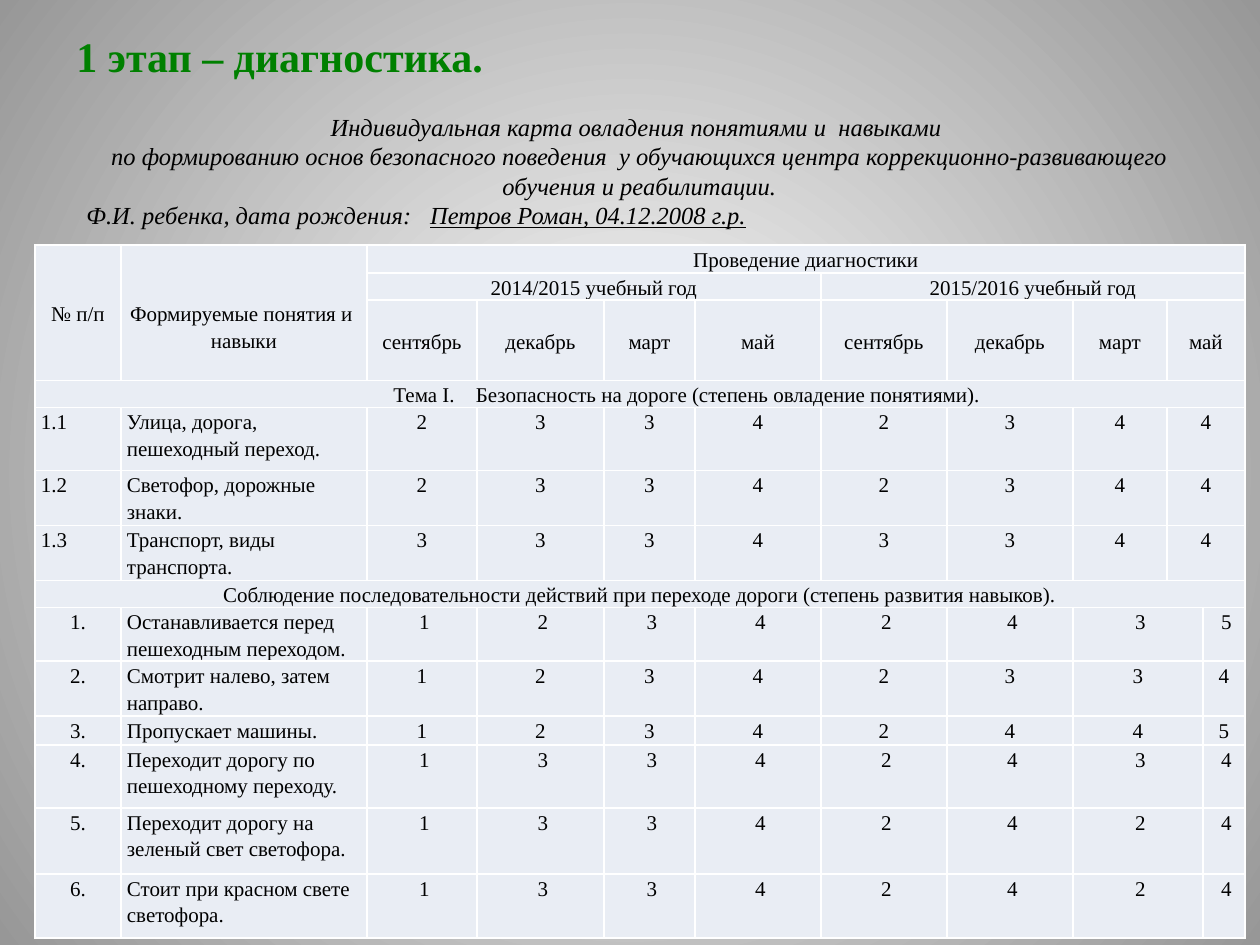
from lxml import etree
from pptx import Presentation
from pptx.dml.color import RGBColor
from pptx.enum.text import MSO_ANCHOR, PP_ALIGN
from pptx.oxml import parse_xml
from pptx.oxml.ns import nsdecls, qn
from pptx.util import Emu, Pt

PX = 914400 / 126
CENTER, LEFT = PP_ALIGN.CENTER, PP_ALIGN.LEFT
TOP, MIDDLE = MSO_ANCHOR.TOP, MSO_ANCHOR.MIDDLE


def px(n):
    return Emu(round(n * PX))


def rgb(value):
    return RGBColor.from_string(value)


class SlideBuilder:
    font = "Times New Roman"
    ink, green = "000000", "008000"
    cell_fill, border = "E9EDF4", "FFFFFF"

    def __init__(self, s):
        self.s = s

    def background(self, inner, outer):
        fill = self.s.background.fill
        fill.gradient()
        for stop, color in zip(fill.gradient_stops, (inner, outer)):
            stop.color.rgb = rgb(color)
        lin = next(self.s.element.iter(qn("a:lin")))
        lin.getparent().replace(lin, parse_xml(
            f'<a:path {nsdecls("a")} path="circle">'
            '<a:fillToRect l="50000" t="50000" r="50000" b="50000"/></a:path>'))

    def style(self, p, size, color, align=LEFT, **font):
        p.alignment = align
        p.font.name, p.font.size = self.font, Pt(size)
        p.font.color.rgb = rgb(color)
        for name, value in font.items():
            setattr(p.font, name, value)

    def wide_space(self, p, extra):
        """One space, widened by extra points of character spacing."""
        r = p.add_run()
        r.text = " "
        r._r.get_or_add_rPr().set("spc", str(extra * 100))

    def text(self, x, y, w, h, lines, size, color, anchor=TOP, wrap=True, **font):
        """Each line is (alignment, plain text, underlined text)."""
        tf = self.s.shapes.add_textbox(px(x), px(y), px(w), px(h)).text_frame
        tf.word_wrap, tf.vertical_anchor = wrap, anchor
        for i, (align, plain, underlined) in enumerate(lines):
            p = tf.add_paragraph() if i else tf.paragraphs[0]
            p.add_run().text = plain
            if underlined:
                self.wide_space(p, 7)
                r = p.add_run()
                r.text, r.font.underline = underlined, True
            self.style(p, size, color, align, **font)

    def table(self, x, y, cols, rows):
        frame = self.s.shapes.add_table(len(rows), len(cols), px(x), px(y),
                                        px(sum(cols)), px(sum(rows)))
        tbl = frame.table
        tbl.first_row = tbl.horz_banding = False
        for col, w in zip(tbl.columns, cols):
            col.width = px(w)
        for row, h in zip(tbl.rows, rows):
            row.height = px(h)
        for cell in tbl.iter_cells():
            cell.fill.solid()
            cell.fill.fore_color.rgb = rgb(self.cell_fill)
            self.cell_borders(cell)
        return tbl

    def cell_borders(self, cell):
        tcPr = cell._tc.get_or_add_tcPr()
        for i, side in enumerate(("lnL", "lnR", "lnT", "lnB")):
            ln = etree.Element(qn(f"a:{side}"), w=str(Pt(1)))
            fill = etree.SubElement(ln, qn("a:solidFill"))
            etree.SubElement(fill, qn("a:srgbClr"), val=self.border)
            tcPr.insert(i, ln)

    def cell(self, tbl, row, col, text, span=(1, 1), align=CENTER, anchor=TOP,
             left=6, top=0):
        cell = tbl.cell(row, col)
        if span != (1, 1):
            cell.merge(tbl.cell(row + span[0] - 1, col + span[1] - 1))
        cell.margin_left, cell.margin_right = px(left), px(6)
        cell.margin_top, cell.margin_bottom = px(top), 0
        cell.vertical_anchor = anchor
        cell.text = text
        p = cell.text_frame.paragraphs[0]
        p.line_spacing = 1.15
        self.style(p, 12, self.ink, align)
        return p


COLS = [86, 246, 110, 127, 91, 126, 126, 126, 94, 36, 42]
ROWS = [28, 27, 80, 27, 63, 55, 55, 27, 53, 55, 29, 63, 66, 64]
MONTHS = ["сентябрь", "декабрь", "март", "май"]

# Number, skill, scores, left margin of the scores
CONCEPTS = [
    ("1.1", "Улица, дорога, пешеходный переход.", "23342344", 6),
    ("1.2", "Светофор, дорожные знаки.", "23342344", 6),
    ("1.3", "Транспорт, виды транспорта.", "33343344", 6),
]
SKILLS = [
    ("1.", "Останавливается перед  пешеходным переходом.", "12342435", 11),
    ("2.", "Смотрит налево, затем направо.", "12342334", 6),
    ("3.", "Пропускает машины.", "12342445", 6),
    ("4.", "Переходит дорогу по пешеходному переходу.", "13342434", 11),
    ("5.", "Переходит дорогу на зеленый свет светофора.", "13342424", 11),
    ("6.", "Стоит при красном свете светофора.", "13342424", 11),
]


def main():
    prs = Presentation()
    prs.slide_width, prs.slide_height = px(1260), px(945)
    b = SlideBuilder(prs.slides.add_slide(prs.slide_layouts[6]))
    b.background("FFFFFF", "979797")

    # Diagnostic table: header
    tbl = b.table(35, 245, COLS, ROWS)
    b.cell(tbl, 0, 0, "№ п/п", (3, 1), anchor=MIDDLE)
    b.cell(tbl, 0, 1, "Формируемые понятия и  навыки", (3, 1), anchor=MIDDLE, top=27)
    b.cell(tbl, 0, 2, "Проведение диагностики", (1, 9))
    b.cell(tbl, 1, 2, "2014/2015 учебный год", (1, 4))
    b.cell(tbl, 1, 6, "2015/2016 учебный год", (1, 5))
    for i, month in enumerate(MONTHS * 2):
        b.cell(tbl, 2, 2 + i, month, (1, 2 if i == 7 else 1), anchor=MIDDLE)

    # Section headings
    p = b.cell(tbl, 3, 0, "Тема I.", (1, 11))
    p._p.get_or_add_pPr().set("marL", str(px(94)))
    b.wide_space(p, 9)
    p.add_run().text = "Безопасность на дороге (степень овладение понятиями)."
    b.cell(tbl, 7, 0, "Соблюдение последовательности действий при переходе дороги "
           "(степень развития навыков).", (1, 11))

    # Scores: the wide column is the last for concepts, the one before it for skills
    for first, items, wide, number_align in ((4, CONCEPTS, 9, LEFT),
                                             (8, SKILLS, 8, CENTER)):
        for row, (number, name, scores, left) in enumerate(items, first):
            b.cell(tbl, row, 0, number, align=number_align)
            b.cell(tbl, row, 1, name, align=LEFT)
            col = 2
            for score in scores:
                width = 2 if col == wide else 1
                b.cell(tbl, row, col, score, (1, width), left=left)
                col += width

    # Card heading
    b.text(74, 105, 1131, 131, [
        (CENTER, "Индивидуальная карта овладения понятиями и  навыками ", None),
        (CENTER, "по формированию основ безопасного поведения  у обучающихся центра "
         "коррекционно-развивающего обучения и реабилитации.", None),
        (LEFT, "Ф.И. ребенка, дата рождения:", "Петров Роман, 04.12.2008 г.р."),
    ], 14, b.ink, anchor=MIDDLE, italic=True)

    # Title
    b.text(64, 24, 436, 63, [(LEFT, "1 этап – диагностика.", None)],
           24, b.green, wrap=False, bold=True)

    prs.save("out.pptx")


if __name__ == "__main__":
    main()
